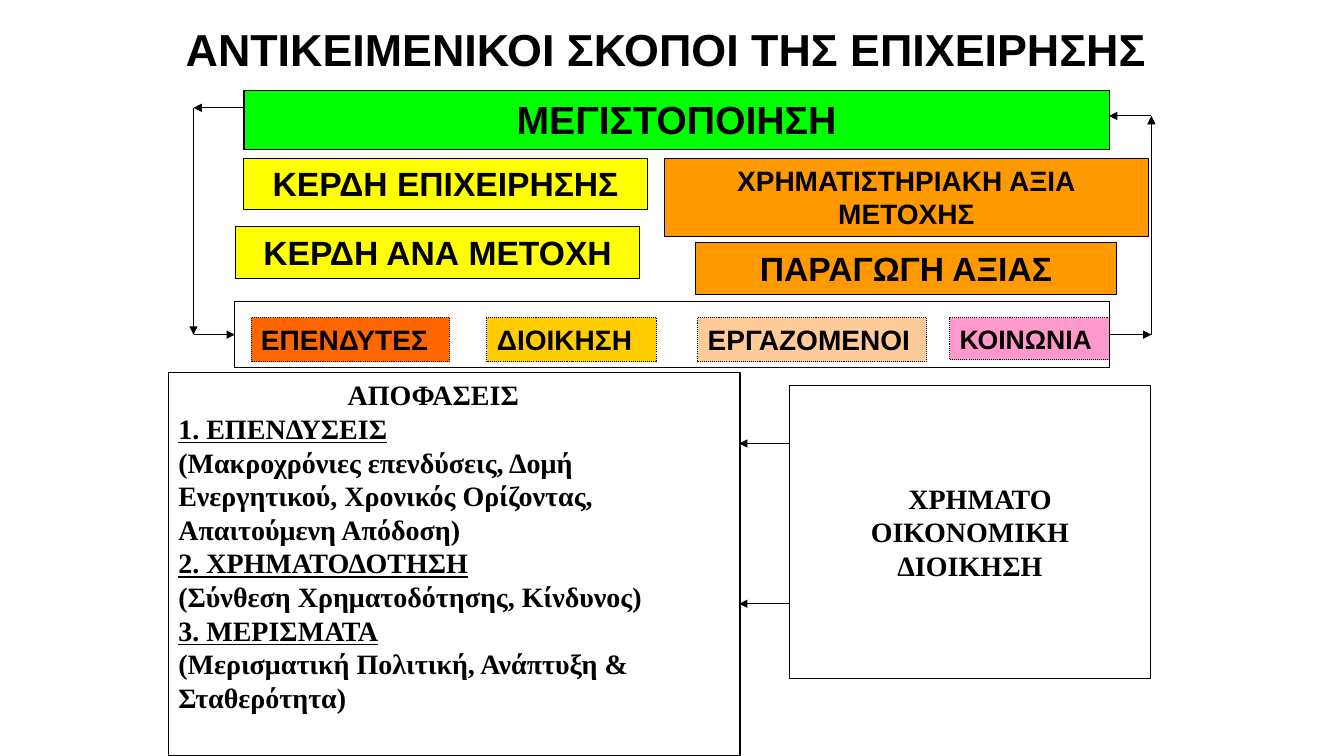
"""Build the slide on the objectives of the enterprise and its financial decisions."""
from dataclasses import dataclass

from lxml import etree
from pptx import Presentation
from pptx.dml.color import RGBColor
from pptx.enum.dml import MSO_LINE_DASH_STYLE as Dash
from pptx.enum.shapes import MSO_CONNECTOR as Connector, MSO_SHAPE as Shape
from pptx.enum.text import MSO_ANCHOR as Anchor, PP_ALIGN as Align
from pptx.oxml.ns import qn
from pptx.util import Inches, Pt


@dataclass(frozen=True)
class Theme:
    """Fonts, type sizes, line width and colours."""
    sans: str = "Arial"
    serif: str = "Times New Roman"
    title: int = 32
    banner: int = 28
    goal: int = 24
    body: int = 20
    compact: int = 19
    line: float = 0.75
    ink: str = "000000"
    green: str = "00FF00"
    yellow: str = "FFFF00"
    orange: str = "FF9900"
    red: str = "FF6600"
    gold: str = "FFCC00"
    peach: str = "FFCC99"
    pink: str = "FF99CC"


THEME = Theme()
TITLE = "ΑΝΤΙΚΕΙΜΕΝΙΚΟΙ ΣΚΟΠΟΙ ΤΗΣ ΕΠΙΧΕΙΡΗΣΗΣ "
GOALS = [
    ("ΚΕΡΔΗ ΕΠΙΧΕΙΡΗΣΗΣ", (2.42, 1.57, 4, 0.51), THEME.yellow, THEME.goal),
    ("ΠΑΡΑΓΩΓΗ ΑΞΙΑΣ", (6.9, 2.41, 4.17, 0.51), THEME.orange, THEME.goal),
    ("ΚΕΡΔΗ ΑΝΑ ΜΕΤΟΧΗ", (2.34, 2.25, 4, 0.51), THEME.yellow, THEME.goal),
    ("ΧΡΗΜΑΤΙΣΤΗΡΙΑΚΗ ΑΞΙΑ ΜΕΤΟΧΗΣ", (6.59, 1.57, 4.8, 0.78), THEME.orange, THEME.body),
    ("ΜΕΓΙΣΤΟΠΟΙΗΣΗ", (2.42, 0.9, 8.58, 0.58), THEME.green, THEME.banner),
]
STAKEHOLDERS = [
    ("ΕΠΕΝΔΥΤΕΣ", (2.49, 3.15, 1.97, 0.44), THEME.red, THEME.body),
    ("ΔΙΟΙΚΗΣΗ", (4.83, 3.15, 1.68, 0.44), THEME.gold, THEME.body),
    ("ΕΡΓΑΖΟΜΕΝΟΙ", (6.92, 3.15, 2.27, 0.44), THEME.peach, THEME.body),
    ("ΚΟΙΝΩΝΙΑ", (9.42, 3.15, 1.58, 0.42), THEME.pink, THEME.compact),
]
DECISIONS_HEADING = "ΑΠΟΦΑΣΕΙΣ"
DECISIONS = [
    ("1. ΕΠΕΝΔΥΣΕΙΣ",
     "(Μακροχρόνιες επενδύσεις, Δομή Ενεργητικού, Χρονικός Ορίζοντας, Απαιτούμενη Απόδοση)"),
    ("2. ΧΡΗΜΑΤΟΔΟΤΗΣΗ", "(Σύνθεση Χρηματοδότησης, Κίνδυνος)"),
    ("3. ΜΕΡΙΣΜΑΤΑ", "(Μερισματική Πολιτική, Ανάπτυξη & Σταθερότητα)"),
]
MANAGEMENT = ["ΧΡΗΜΑΤΟ", "ΟΙΚΟΝΟΜΙΚΗ", "ΔΙΟΙΚΗΣΗ"]
DECISIONS_BOX = (1.67, 3.7, 5.67, 3.8)
MANAGEMENT_BOX = (7.83, 3.82, 3.58, 2.91)
HEADING_INDENT, MANAGEMENT_INDENT = 1.68, 0.2

FRAME_LEFT, FRAME_TOP, FRAME_RIGHT, FRAME_BOTTOM = 2.33, 2.99, 11, 3.65
FRAME_MIDDLE = 3.32
FRAME_CORNERS = [(FRAME_LEFT, FRAME_TOP), (FRAME_RIGHT, FRAME_TOP),
                 (FRAME_RIGHT, FRAME_BOTTOM), (FRAME_LEFT, FRAME_BOTTOM)]
ARROW_PATHS = [
    [(2.42, 1.07), (1.92, 1.07), (1.92, FRAME_MIDDLE), (FRAME_LEFT, FRAME_MIDDLE)],
    [(FRAME_RIGHT, FRAME_MIDDLE), (11.42, FRAME_MIDDLE), (11.42, 1.15), (FRAME_RIGHT, 1.15)],
    [(7.83, 4.4), (7.33, 4.4)],
    [(7.83, 5.99), (7.33, 5.99)],
]


def write(shape, lines, size, font, align=Align.LEFT, anchor=Anchor.TOP):
    """Fill a shape with bold lines and return its paragraphs."""
    frame = shape.text_frame
    frame.word_wrap = True
    frame.vertical_anchor = anchor
    frame.text = "\n".join(lines)
    for paragraph in frame.paragraphs:
        paragraph.alignment = align
        for run in paragraph.runs:
            run.font.name = font
            run.font.size = Pt(size)
            run.font.bold = True
            run.font.color.rgb = RGBColor.from_string(THEME.ink)
    return frame.paragraphs


def indent(paragraph, inches):
    """Set the left margin of a paragraph."""
    paragraph._p.get_or_add_pPr().set("marL", str(Inches(inches)))


def style_line(line):
    """Give a line the common colour and width."""
    line.color.rgb = RGBColor.from_string(THEME.ink)
    line.width = Pt(THEME.line)


def add_box(slide, place, fill=None):
    """Add an outlined rectangle."""
    shape = slide.shapes.add_shape(Shape.RECTANGLE, *map(Inches, place))
    shape.shadow.inherit = False
    if fill:
        shape.fill.solid()
        shape.fill.fore_color.rgb = RGBColor.from_string(fill)
    else:
        shape.fill.background()
    style_line(shape.line)
    return shape


def add_line(slide, start, end, arrow=False):
    """Add a straight line, with an arrowhead at its end if asked."""
    connector = slide.shapes.add_connector(Connector.STRAIGHT, *map(Inches, start + end))
    style_line(connector.line)
    if arrow:
        etree.SubElement(connector.line._get_or_add_ln(), qn("a:tailEnd"), type="triangle")
    etree.SubElement(connector._element.spPr, qn("a:effectLst"))


def main():
    """Compose and save the slide."""
    presentation = Presentation()
    presentation.slide_width, presentation.slide_height = Inches(13.33), Inches(7.5)
    slide = presentation.slides.add_slide(presentation.slide_layouts[6])

    title = slide.shapes.add_textbox(*map(Inches, (1.67, 0.17, 10, 0.64)))
    write(title, [TITLE], THEME.title, THEME.sans, Align.CENTER)

    for text, place, fill, size in GOALS:
        write(add_box(slide, place, fill), [text], size, THEME.sans, Align.CENTER)
    for text, place, fill, size in STAKEHOLDERS:
        box = add_box(slide, place, fill)
        box.line.dash_style = Dash.ROUND_DOT
        write(box, [text], size, THEME.sans)

    for start, end in zip(FRAME_CORNERS, FRAME_CORNERS[1:] + FRAME_CORNERS[:1]):
        add_line(slide, start, end)

    lines = [DECISIONS_HEADING] + [line for decision in DECISIONS for line in decision]
    paragraphs = write(add_box(slide, DECISIONS_BOX), lines, THEME.body, THEME.serif)
    indent(paragraphs[0], HEADING_INDENT)
    for paragraph in paragraphs[1::2]:
        paragraph.runs[0].font.underline = True

    paragraphs = write(add_box(slide, MANAGEMENT_BOX), MANAGEMENT, THEME.body, THEME.serif,
                       Align.CENTER, Anchor.MIDDLE)
    indent(paragraphs[0], MANAGEMENT_INDENT)

    for points in ARROW_PATHS:
        for start, end in zip(points, points[1:]):
            add_line(slide, start, end, arrow=True)

    presentation.save("out.pptx")


if __name__ == "__main__":
    main()
